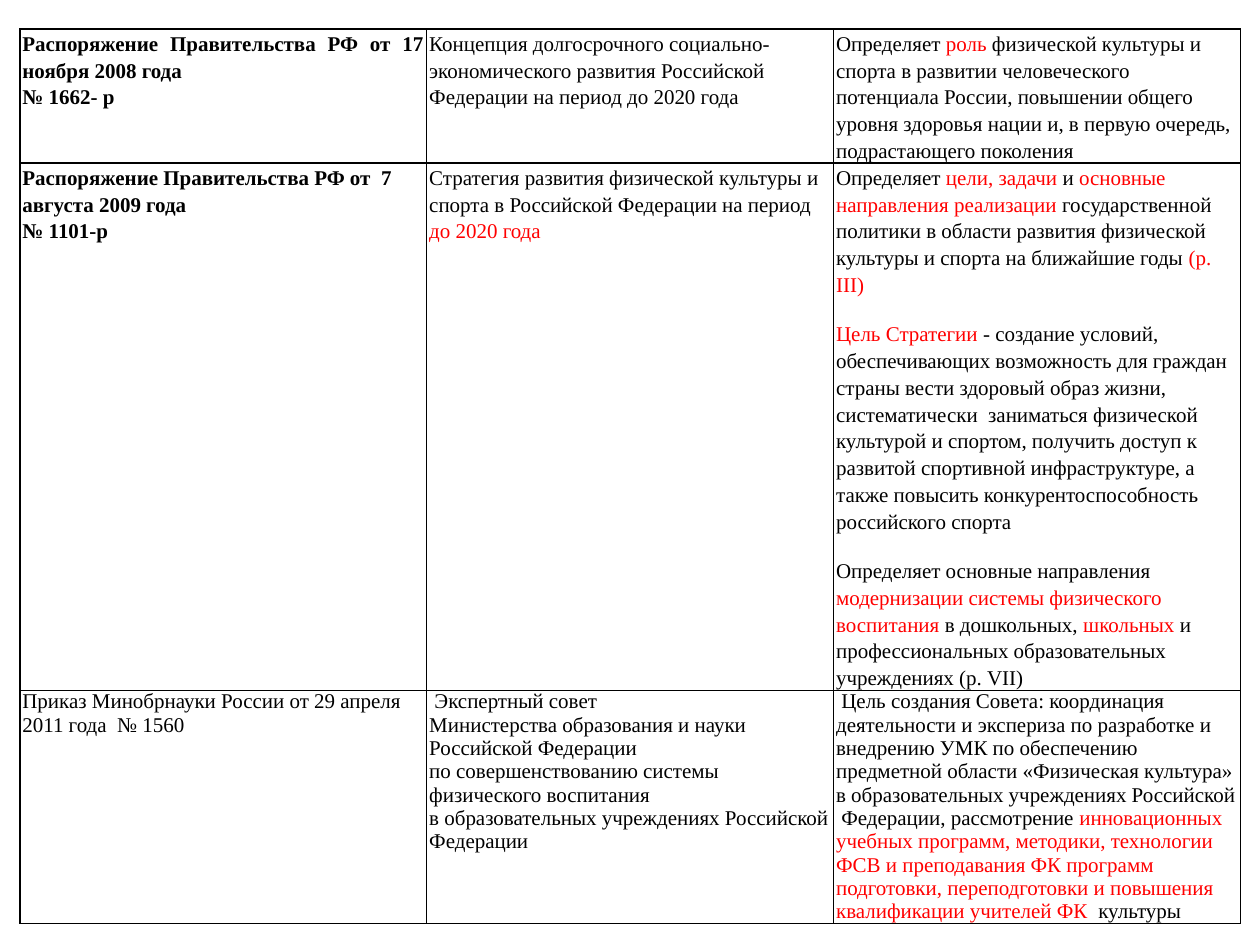
from dataclasses import dataclass

from lxml import etree
from pptx import Presentation
from pptx.dml.color import RGBColor
from pptx.enum import text
from pptx.oxml import ns
from pptx.util import Pt


@dataclass(frozen=True)
class Theme:
    font: str = "Times New Roman"
    size: float = 12
    ink: str = "000000"
    accent: str = "FF0000"
    border: float = 1
    inset: float = 1.5


@dataclass(frozen=True)
class Entry:
    paragraphs: tuple
    bold: bool = False
    align: text.PP_ALIGN = text.PP_ALIGN.LEFT
    leading: float = 1.0
    before: float = 0
    after: float = 0


class Deck:
    def __init__(self, theme, width, height):
        self.theme = theme
        self.presentation = Presentation()
        self.presentation.slide_width = Pt(width)
        self.presentation.slide_height = Pt(height)
        self.slide = None

    def add_slide(self):
        blank = self.presentation.slide_layouts[6]
        self.slide = self.presentation.slides.add_slide(blank)

    def table(self, left, top, column_width, row_heights, entries):
        columns = len(entries[0])
        grid = self.slide.shapes.add_table(
            len(entries), columns, Pt(left), Pt(top),
            Pt(column_width * columns), Pt(sum(row_heights)),
        ).table
        grid.first_row = grid.horz_banding = False
        for column in grid.columns:
            column.width = Pt(column_width)
        for r, (height, row) in enumerate(zip(row_heights, entries)):
            grid.rows[r].height = Pt(height)
            for c, entry in enumerate(row):
                self.cell(grid.cell(r, c), entry)

    def cell(self, cell, entry):
        cell.margin_left = cell.margin_right = Pt(self.theme.inset)
        cell.margin_top = cell.margin_bottom = 0
        self.borders(cell)
        cell.fill.background()
        frame = cell.text_frame
        for i, content in enumerate(entry.paragraphs):
            paragraph = frame.add_paragraph() if i else frame.paragraphs[0]
            paragraph.alignment = entry.align
            paragraph.line_spacing = entry.leading
            paragraph.space_before = Pt(entry.before)
            paragraph.space_after = Pt(entry.after)
            self.runs(paragraph, content, entry.bold)

    def runs(self, paragraph, content, bold):
        for i, part in enumerate(content.split("|")):
            color = self.theme.accent if i % 2 else self.theme.ink
            for n, line in enumerate(part.split("\n")):
                if n:
                    paragraph.add_line_break()
                if line:
                    self.run(paragraph, line, color, bold)

    def run(self, paragraph, line, color, bold):
        run = paragraph.add_run()
        run.text = line
        run.font.name = self.theme.font
        run.font.size = Pt(self.theme.size)
        run.font.bold = bold
        run.font.color.rgb = RGBColor.from_string(color)

    def borders(self, cell):
        properties = cell._tc.get_or_add_tcPr()
        for side in ("a:lnL", "a:lnR", "a:lnT", "a:lnB"):
            line = etree.SubElement(
                properties, ns.qn(side), w=str(Pt(self.theme.border)))
            fill = etree.SubElement(line, ns.qn("a:solidFill"))
            etree.SubElement(fill, ns.qn("a:srgbClr"), val=self.theme.ink)

    def save(self):
        self.presentation.save("out.pptx")


LOOSE = dict(leading=1.15, before=3.8, after=9)

DOCUMENTS = (
    (
        Entry(("Распоряжение Правительства РФ от 17 ноября 2008 года", "№ 1662- р"),
              bold=True, align=text.PP_ALIGN.JUSTIFY, leading=1.15),
        Entry(("Концепция долгосрочного социально-экономического развития "
               "Российской Федерации на период до 2020 года",),
              leading=1.15, after=10),
        Entry(("Определяет |роль |физической культуры и спорта в развитии "
               "человеческого потенциала России, повышении общего уровня "
               "здоровья нации и, в первую очередь, подрастающего поколения",),
              **LOOSE),
    ),
    (
        Entry(("Распоряжение Правительства РФ от  7 августа 2009 года", "№ 1101-р"),
              bold=True, leading=1.15),
        Entry(("Стратегия развития физической культуры и спорта в Российской "
               "Федерации на период |до 2020 года",), **LOOSE),
        Entry(("Определяет |цели, задачи |и |основные направления реализации| "
               "государственной политики в области развития физической культуры "
               "и спорта на ближайшие годы |(р. III)",
               "|Цель Стратегии| - создание условий, обеспечивающих возможность "
               "для граждан страны вести здоровый образ жизни, систематически "
               " заниматься физической культурой и спортом, получить доступ к "
               "развитой спортивной инфраструктуре, а также повысить "
               "конкурентоспособность российского спорта",
               "Определяет основные направления |модернизации системы физического "
               "воспитания |в дошкольных, |школьных| и профессиональных "
               "образовательных учреждениях (р. VII)"), **LOOSE),
    ),
    (
        Entry(("Приказ Минобрнауки России от 29 апреля 2011 года  № 1560",)),
        Entry((" Экспертный совет\nМинистерства образования и науки Российской "
               "Федерации\nпо совершенствованию системы физического воспитания\n"
               "в образовательных учреждениях Российской Федерации",)),
        Entry((" Цель создания Совета: координация деятельности и экспериза по "
               "разработке и внедрению УМК по обеспечению предметной области "
               "«Физическая культура» в образовательных учреждениях Российской  "
               "Федерации, рассмотрение |инновационных учебных программ, методики, "
               "технологии ФСВ и преподавания ФК программ подготовки, "
               "переподготовки и повышения квалификации учителей ФК  |культуры",)),
    ),
)


def main():
    deck = Deck(Theme(), 720, 540)
    deck.add_slide()
    deck.table(11.3, 16.7, 232.5, (76.5, 301, 133), DOCUMENTS)
    deck.save()


if __name__ == "__main__":
    main()
